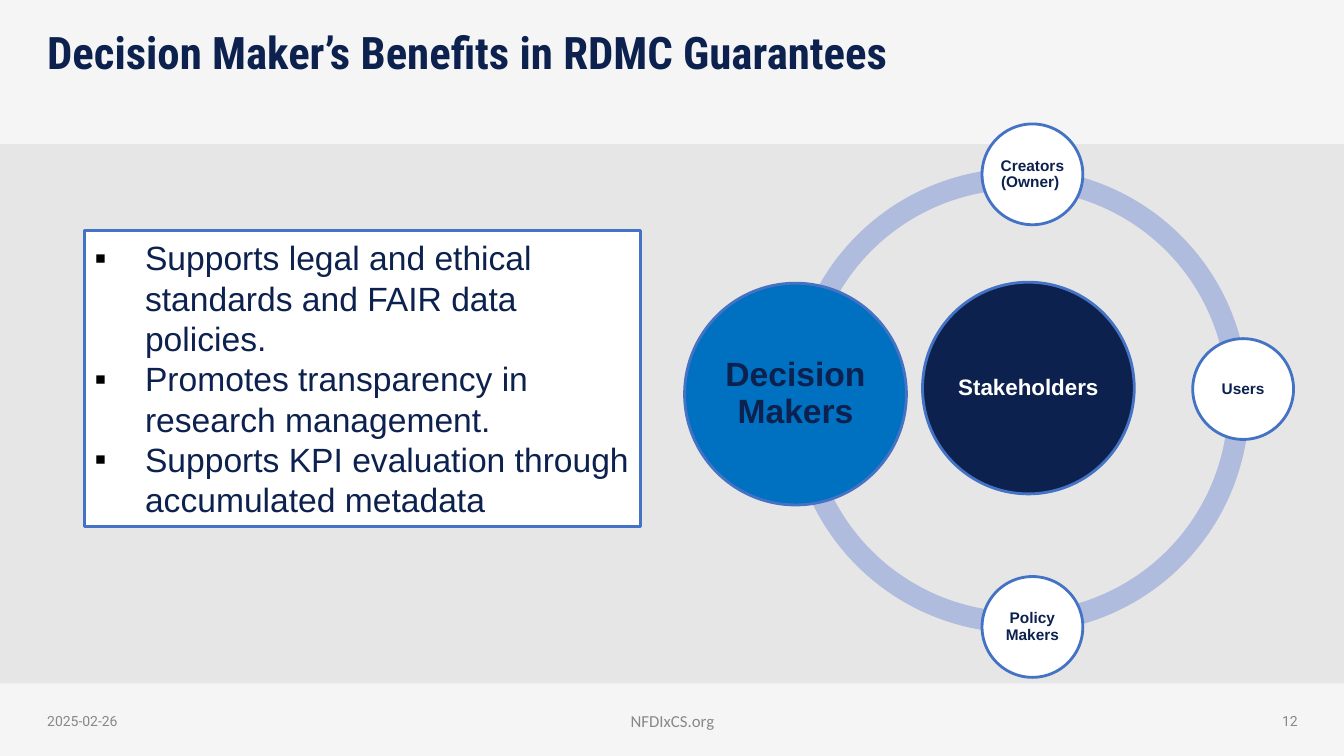
import pptx
import pptx.dml.color
import pptx.enum.shapes
import pptx.enum.text
import pptx.oxml.ns
import pptx.oxml.xmlchemy
import pptx.util

Inches = pptx.util.Inches
Pt = pptx.util.Pt
RGBColor = pptx.dml.color.RGBColor
Shape = pptx.enum.shapes.MSO_SHAPE
Align = pptx.enum.text.PP_ALIGN
Anchor = pptx.enum.text.MSO_ANCHOR

NAVY = RGBColor(0x0D, 0x21, 0x4F)
BLUE = RGBColor(0x00, 0x70, 0xC0)
OUTLINE = RGBColor(0x44, 0x72, 0xC4)
RING = RGBColor(0xB0, 0xBC, 0xDE)
WHITE = RGBColor(0xFF, 0xFF, 0xFF)
BACKDROP = RGBColor(0xE7, 0xE6, 0xE6)
GREY = RGBColor(0x88, 0x88, 0x88)


def add_xml(parent, tag, **attributes):
    element = pptx.oxml.xmlchemy.OxmlElement(tag)
    for name, value in attributes.items():
        element.set(name, value)
    parent.append(element)
    return element


class StakeholderPage:
    font = "Arial"

    def __init__(self, deck):
        self.page = deck.slides.add_slide(deck.slide_layouts[6])
        fill = self.page.background.fill
        fill.solid()
        fill.fore_color.rgb = BACKDROP

    def span(self, para, text, size, color, font=None, bold=False):
        span = para.add_run()
        span.text = text
        span.font.size = Pt(size)
        span.font.name = font or self.font
        span.font.bold = bold
        span.font.color.rgb = color

    def text(self, place, text, size, color, font, align=Align.LEFT,
             anchor=Anchor.MIDDLE, bold=False):
        box = self.page.shapes.add_textbox(*map(Inches, place))
        frame = box.text_frame
        frame.word_wrap = True
        frame.vertical_anchor = anchor
        para = frame.paragraphs[0]
        para.alignment = align
        self.span(para, text, size, color, font, bold)
        return para

    def shape(self, kind, place, color, outlined=False):
        shape = self.page.shapes.add_shape(kind, *map(Inches, place))
        shape.shadow.inherit = False
        shape.fill.solid()
        shape.fill.fore_color.rgb = color
        if outlined:
            shape.line.color.rgb = OUTLINE
            shape.line.width = Pt(2)
        else:
            shape.line.fill.background()
        return shape

    def band(self, top, height):
        band = self.shape(Shape.RECTANGLE, (0, top, 13.33, height), WHITE)
        color = band._element.find(".//" + pptx.oxml.ns.qn("a:srgbClr"))
        add_xml(color, "a:alpha", val="60000")

    def bullets(self, place, lines):
        box = self.shape(Shape.RECTANGLE, place, WHITE, outlined=True)
        frame = box.text_frame
        frame.word_wrap = True
        frame.vertical_anchor = Anchor.MIDDLE
        for number, line in enumerate(lines):
            para = frame.add_paragraph() if number else frame.paragraphs[0]
            para.alignment = Align.LEFT
            para.line_spacing = Pt(28.8)
            properties = para._p.get_or_add_pPr()
            properties.set("marL", str(Inches(0.5)))
            properties.set("indent", str(Inches(-0.5)))
            color = add_xml(properties, "a:buClr")
            add_xml(color, "a:srgbClr", val="000000")
            add_xml(properties, "a:buFont", typeface=self.font)
            add_xml(properties, "a:buChar", char="▪")
            self.span(para, line, 24, NAVY)

    def arc(self, left, top, start, end):
        """Draw a ring section clockwise between two angles in degrees."""
        arc = self.shape(Shape.BLOCK_ARC, (left, top, 4.56, 4.56), RING)
        arc.adjustments[0] = start * 0.6
        arc.adjustments[1] = end * 0.6
        arc.adjustments[2] = 0.046

    def circle(self, left, top, size, text, points, fill=WHITE, color=NAVY):
        circle = self.shape(Shape.OVAL, (left, top, size, size), fill, outlined=True)
        frame = circle.text_frame
        frame.word_wrap = True
        frame.vertical_anchor = Anchor.MIDDLE
        frame.margin_left = frame.margin_right = Inches(0.02)
        frame.margin_top = frame.margin_bottom = Inches(0.02)
        para = frame.paragraphs[0]
        para.alignment = Align.CENTER
        para.line_spacing = 0.9
        self.span(para, text, points, color, bold=True)


def main():
    deck = pptx.Presentation()
    deck.slide_width = Inches(13.33)
    deck.slide_height = Inches(7.5)
    page = StakeholderPage(deck)

    # Header and footer
    page.band(6.78, 0.72)
    page.band(0, 1.43)
    title = page.text((0.37, 0.26, 12.6, 1.17),
                      "Decision Maker’s Benefits in RDMC Guarantees",
                      32, NAVY, "Roboto Condensed", anchor=Anchor.TOP, bold=True)
    title.line_spacing = 0.9
    page.text((0.37, 6.95, 3, 0.4), "2025-02-26", 10, GREY, "Roboto")
    page.text((9.97, 6.95, 3, 0.4), "12", 10, GREY, "Roboto", Align.RIGHT)
    page.text((3.74, 6.95, 5.86, 0.4), "NFDIxCS.org", 12, GREY, "Calibri", Align.CENTER)

    # Benefits
    page.bullets((0.84, 2.29, 5.51, 2.93), [
        "Supports legal and ethical standards and FAIR data policies.",
        "Promotes transparency in research management.",
        "Supports KPI evaluation through accumulated metadata",
    ])

    # Ring
    page.arc(7.82, 1.67, 273.51, 357.54)
    page.arc(7.83, 1.67, 181.22, 273.27)
    page.arc(7.83, 1.72, 86.7, 182.35)
    page.arc(7.83, 1.72, 356.38, 86.55)

    # Stakeholders
    page.circle(9.15, 2.8, 2.1, "Stakeholders", 16, NAVY, WHITE)
    page.circle(11.83, 3.36, 1, "Users", 11)
    page.circle(9.74, 5.72, 1, "Policy Makers", 11)
    page.circle(6.79, 2.81, 2.2, "Decision Makers", 24, BLUE)
    page.circle(9.74, 1.23, 1, "Creators (Owner) ", 11)

    deck.save("out.pptx")


if __name__ == "__main__":
    main()
